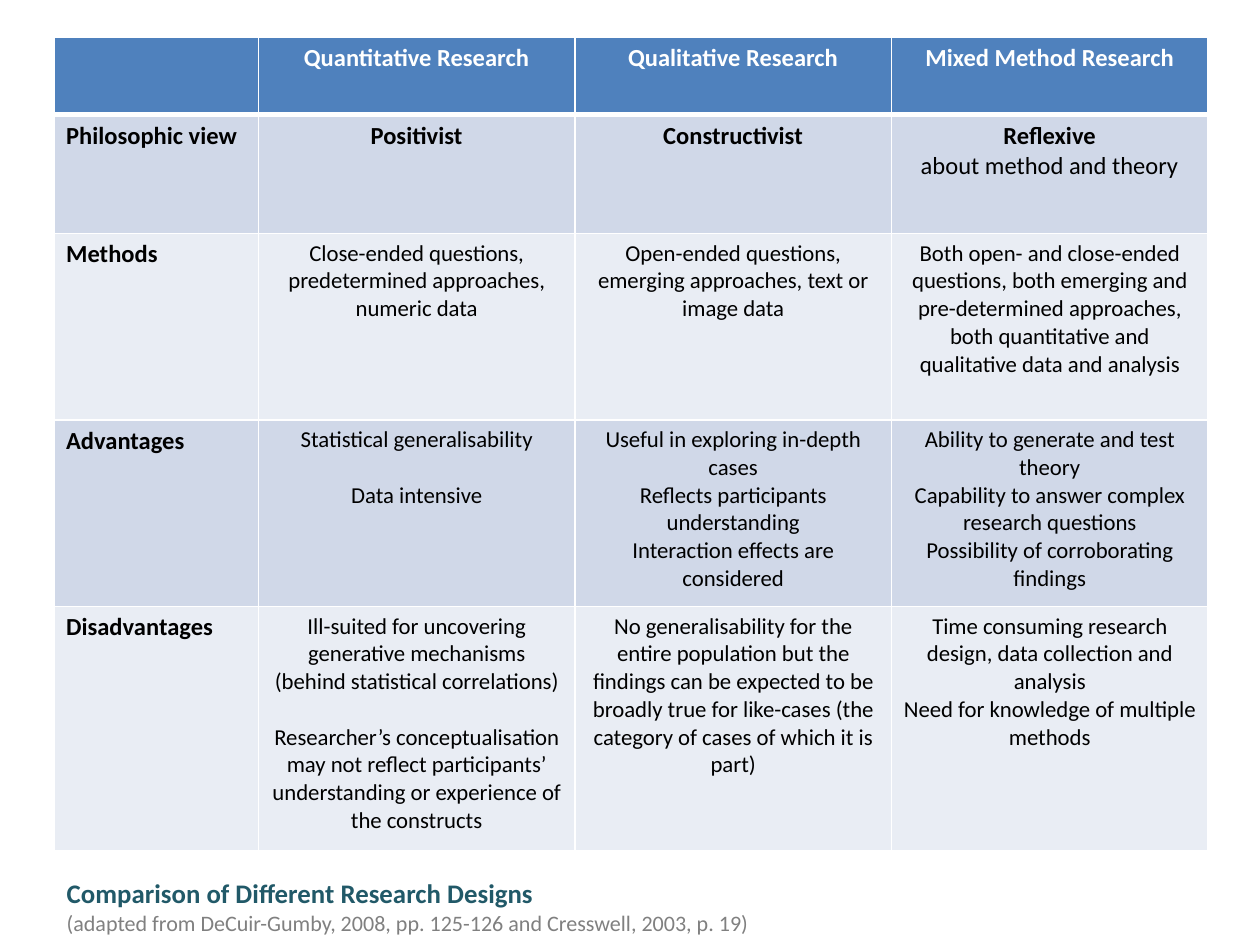
from dataclasses import dataclass

from lxml import etree
from pptx import Presentation
from pptx import util as u
from pptx.dml.color import RGBColor
from pptx.enum import text
from pptx.oxml import ns

WHITE = RGBColor(0xFF, 0xFF, 0xFF)
BLACK = RGBColor(0, 0, 0)
HEADER_BLUE = RGBColor(0x4F, 0x81, 0xBD)
BAND_DARK = RGBColor(0xD0, 0xD8, 0xE8)
BAND_LIGHT = RGBColor(0xE9, 0xED, 0xF4)
TEAL = RGBColor(0x21, 0x59, 0x68)
GREY = RGBColor(0x80, 0x80, 0x80)

HEADING = {"name": "Calibri", "size": u.Pt(14), "bold": True}
BODY = {"name": "Calibri", "size": u.Pt(13), "bold": False}
SUBHEADING = {**HEADING, "bold": False}
CAPTION = {"name": "Calibri", "size": u.Pt(15.3), "bold": True}
CITATION = {"name": "Calibri", "size": u.Pt(12.6), "bold": False}
MARGINS = {"margin_left": u.Pt(6.8), "margin_right": u.Pt(6.8),
           "margin_top": u.Pt(3.6), "margin_bottom": u.Pt(3.6)}


@dataclass
class Para:
    text: str
    fmt: dict
    gap: float = 0


@dataclass
class Row:
    height: float
    label: str
    cells: list[list[Para]]


def heads(*names: str) -> list[list[Para]]:
    return [[Para(name, HEADING)] for name in names]


def body(*lines: str, gap: float = 0) -> list[Para]:
    return [Para(line, BODY, gap if i else 0) for i, line in enumerate(lines)]


LINE_GAP = 15.9
ROWS = [
    Row(44.6, "", heads("Quantitative Research", "Qualitative Research",
                        "Mixed Method Research")),
    Row(67.7, "Philosophic view", [
        *heads("Positivist", "Constructivist"),
        [Para("Reflexive", HEADING), Para("about method and theory", SUBHEADING)],
    ]),
    Row(106.6, "Methods", [
        body("Close-ended questions, predetermined approaches, numeric data"),
        body("Open-ended questions, emerging approaches, text or image data"),
        body("Both open- and close-ended questions, both emerging and "
             "pre-determined approaches, both quantitative and qualitative "
             "data and analysis"),
    ]),
    Row(106.6, "Advantages", [
        body("Statistical generalisability", "Data intensive", gap=LINE_GAP),
        body("Useful in exploring in-depth cases",
             "Reflects participants understanding",
             "Interaction effects are considered"),
        body("Ability to generate and test theory",
             "Capability to answer complex research questions",
             "Possibility of corroborating findings"),
    ]),
    Row(139.7, "Disadvantages", [
        body("Ill-suited for uncovering generative mechanisms (behind "
             "statistical correlations)",
             "Researcher’s conceptualisation may not reflect participants’ "
             "understanding or experience of the constructs", gap=LINE_GAP),
        body("No generalisability for the entire population but the findings "
             "can be expected to be broadly true for like-cases (the category "
             "of cases of which it is part)"),
        body("Time consuming research design, data collection and analysis",
             "Need for knowledge of multiple methods"),
    ]),
]
COL_WIDTHS = [116.6] + [180.9] * 3


def set_attrs(obj, values: dict) -> None:
    for key, value in values.items():
        setattr(obj, key, value)


def add_run(p, content: str, fmt: dict, color: RGBColor) -> None:
    r = p.add_run()
    r.text = content
    set_attrs(r.font, fmt)
    r.font.color.rgb = color


def set_borders(cell, widths: dict[str, float]) -> None:
    """White borders; they must precede the fill in the cell properties."""
    props = cell._tc.get_or_add_tcPr()
    for i, (side, width) in enumerate(widths.items()):
        ln = etree.Element(ns.qn(f"a:ln{side}"), w=str(u.Pt(width)))
        fill = etree.SubElement(ln, ns.qn("a:solidFill"))
        etree.SubElement(fill, ns.qn("a:srgbClr"), val=str(WHITE))
        props.insert(i, ln)


def fill_cell(cell, paras: list[Para], color: RGBColor, align) -> None:
    set_attrs(cell, MARGINS)
    tf = cell.text_frame
    for i, para in enumerate(paras):
        p = tf.add_paragraph() if i else tf.paragraphs[0]
        p.alignment = align
        if para.gap:
            p.space_before = u.Pt(para.gap)
        add_run(p, para.text, para.fmt, color)


def add_comparison(s) -> None:
    frame = s.shapes.add_table(len(ROWS), len(COL_WIDTHS), u.Pt(31), u.Pt(21),
                               u.Pt(sum(COL_WIDTHS)),
                               u.Pt(sum(row.height for row in ROWS)))
    table = frame.table
    for column, width in zip(table.columns, COL_WIDTHS):
        column.width = u.Pt(width)
    for i, row in enumerate(ROWS):
        table.rows[i].height = u.Pt(row.height)
        fill = BAND_DARK if i % 2 else BAND_LIGHT
        label = [Para(row.label, HEADING)] if row.label else []
        for j, paras in enumerate([label, *row.cells]):
            cell = table.cell(i, j)
            cell.fill.solid()
            cell.fill.fore_color.rgb = fill if i else HEADER_BLUE
            set_borders(cell, {"L": 1, "R": 1, "T": 3 if i == 1 else 1,
                               "B": 1 if i else 3})
            fill_cell(cell, paras, BLACK if i else WHITE,
                      text.PP_ALIGN.CENTER if j else text.PP_ALIGN.LEFT)


def add_caption(s) -> None:
    sp = s.shapes.add_textbox(u.Pt(31), u.Pt(496), u.Pt(652), u.Pt(44))
    tf = sp.text_frame
    set_attrs(tf, {"word_wrap": True,
                   "vertical_anchor": text.MSO_ANCHOR.MIDDLE})
    p = tf.paragraphs[0]
    add_run(p, "Comparison of Different Research Designs", CAPTION, TEAL)
    p.add_line_break()
    add_run(p, "(adapted from DeCuir-Gumby, 2008, pp. 125-126 and "
               "Cresswell, 2003, p. 19)", CITATION, GREY)


def main() -> None:
    prs = Presentation()
    prs.slide_width, prs.slide_height = u.Pt(720), u.Pt(540)
    s = prs.slides.add_slide(prs.slide_layouts[6])

    # Caption below the table
    add_caption(s)

    # Comparison table
    add_comparison(s)

    prs.save("out.pptx")


if __name__ == "__main__":
    main()
